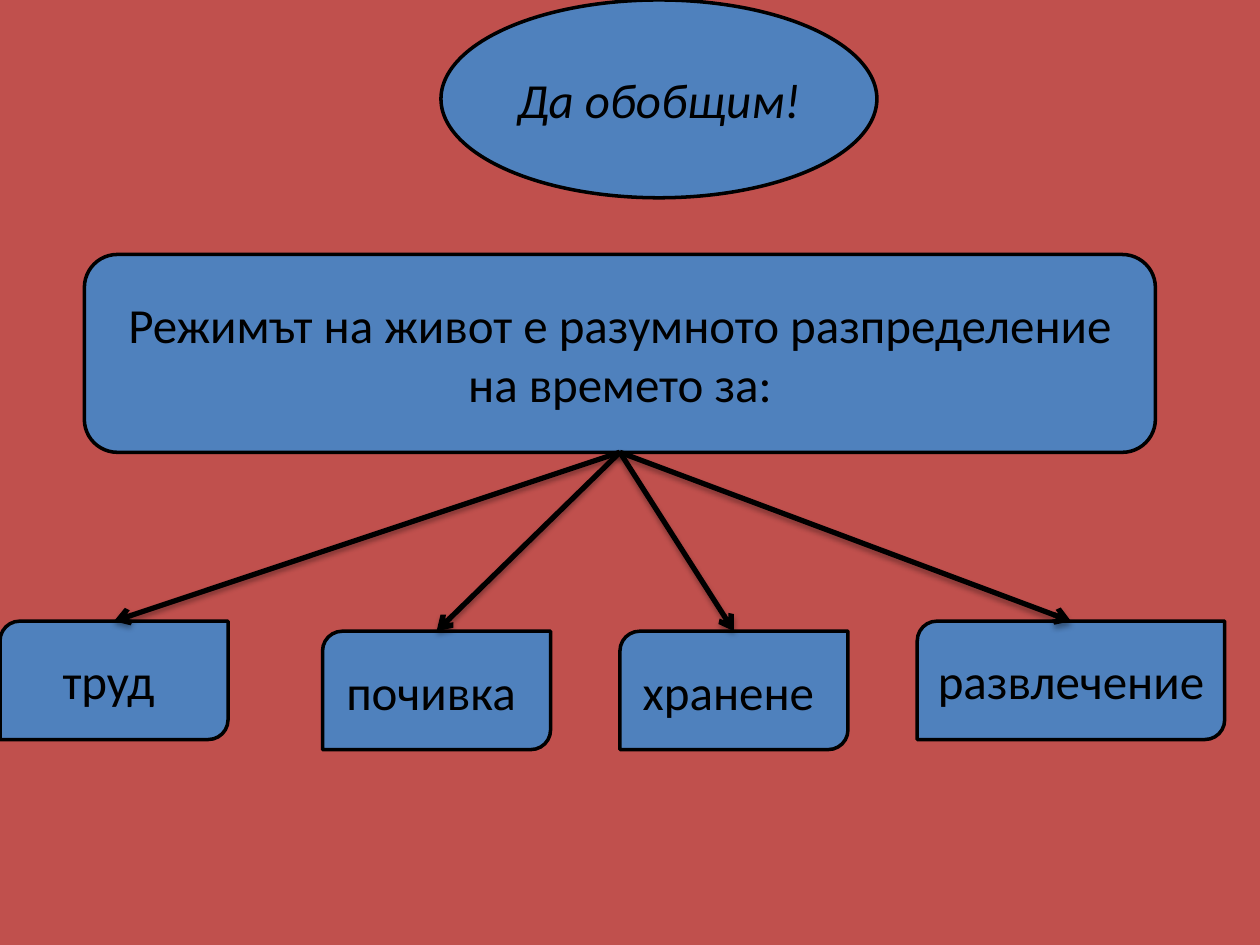
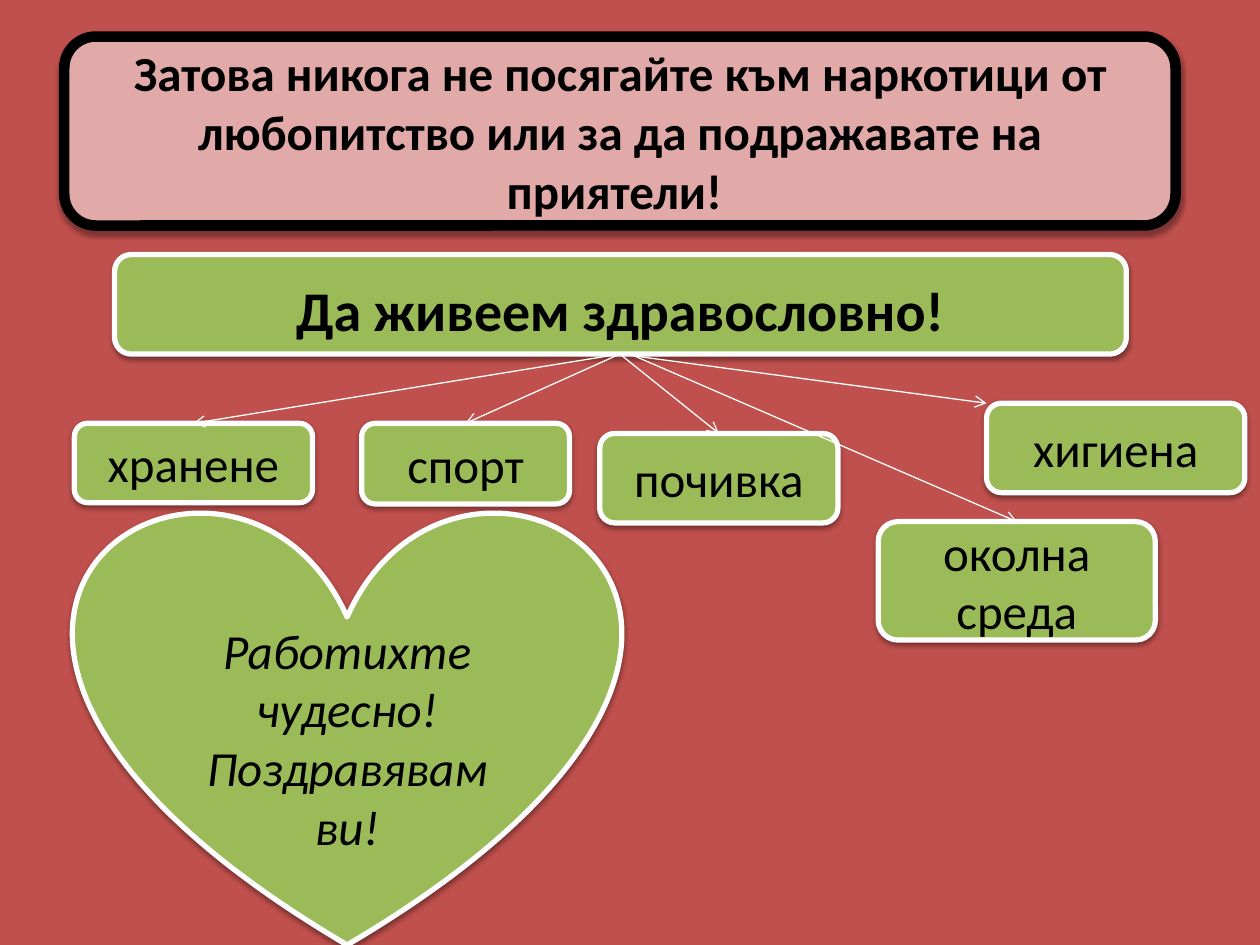
from lxml import etree
from pptx import Presentation
from pptx import util as u
from pptx.dml.color import RGBColor
from pptx.enum import shapes, text
from pptx.oxml import ns

rgb = RGBColor.from_string
RED, BLUE, GREEN, PINK = "C0504D", "4F81BD", "9BBB59", "E1AAA9"
BLACK, WHITE = "000000", "FFFFFF"
DARK_SHADOW, SOFT_SHADOW = (35, 1.8), (38, 1.6)
G = shapes.MSO_SHAPE


def outline(sp, color, width, shadow=None):
    sp.line.color.rgb = rgb(color)
    sp.line.width = u.Pt(width)
    effects = etree.SubElement(sp._element.spPr, ns.qn("a:effectLst"))
    if shadow:
        alpha, dist = shadow
        outer = etree.SubElement(effects, ns.qn("a:outerShdw"), blurRad=str(u.Pt(3.1)),
                                 dist=str(u.Pt(dist)), dir="5400000", rotWithShape="0")
        clr = etree.SubElement(outer, ns.qn("a:srgbClr"), val=BLACK)
        etree.SubElement(clr, ns.qn("a:alpha"), val=str(alpha * 1000))


def box(s, kind, at, words, fill, line, shadow=None, size=28, bold=False, italic=False, top=0.05):
    sp = s.shapes.add_shape(kind, *map(u.Inches, at))
    sp.fill.solid()
    sp.fill.fore_color.rgb = rgb(fill)
    outline(sp, *line, shadow)
    tf = sp.text_frame
    tf.word_wrap = True
    tf.margin_top = u.Inches(top)
    tf.vertical_anchor = text.MSO_ANCHOR.MIDDLE
    p = tf.paragraphs[0]
    p.alignment = text.PP_ALIGN.CENTER
    r = p.add_run()
    r.text = words
    r.font.name = "Calibri"
    r.font.size = u.Pt(size)
    r.font.bold = bold
    r.font.italic = italic
    r.font.color.rgb = rgb(BLACK)


prs = Presentation()
prs.slide_width, prs.slide_height = u.Inches(10), u.Inches(7.5)
slides = []
for _ in range(2):
    s = prs.slides.add_slide(prs.slide_layouts[6])
    s.background.fill.solid()
    s.background.fill.fore_color.rgb = rgb(RED)
    slides.append(s)
summary, healthy = slides

thin_black, white = (BLACK, 2), (WHITE, 3)
box(summary, G.FLOWCHART_ALTERNATE_PROCESS, (0.67, 2.02, 8.5, 1.57),
    "Режимът на живот е разумното разпределение на времето за:", BLUE, thin_black)
box(summary, G.OVAL, (3.5, 0, 3.46, 1.57), "Да обобщим!", BLUE, thin_black, italic=True)

regime_arrows = []
for words, x, y, w in [("труд ", 0, 4.93, 1.81), ("почивка ", 2.56, 5.01, 1.81),
                       ("хранене ", 4.92, 5.01, 1.81), ("развлечение", 7.28, 4.93, 2.44)]:
    box(summary, G.ROUND_2_DIAG_RECTANGLE, (x, y, w, 0.94), words, BLUE, thin_black)
    regime_arrows.append((4.92, 3.59, x + w / 2, y))

box(healthy, G.ROUNDED_RECTANGLE, (0.51, 0.29, 8.82, 1.5),
    "Затова никога не посягайте към наркотици от любопитство или за да подражавате на приятели! ",
    PINK, (BLACK, 6), DARK_SHADOW, bold=True)
box(healthy, G.ROUNDED_RECTANGLE, (0.91, 2.02, 8.03, 0.79), "Да живеем здравословно!",
    GREEN, white, SOFT_SHADOW, size=32, bold=True, top=0.12)

health_arrows = []
for words, x, y, w, h, start, reach in [
        ("хранене", 0.59, 3.36, 1.89, 0.63, 4.92, 0.5),
        ("спорт", 2.87, 3.36, 1.65, 0.64, 4.92, 0.5),
        ("почивка", 4.76, 3.44, 1.89, 0.71, 4.92, 0.5),
        ("хигиена", 7.83, 3.2, 2.05, 0.71, 4.92, 0),
        ("околна среда", 6.97, 4.14, 2.2, 0.94, 5, 0.5)]:
    box(healthy, G.ROUNDED_RECTANGLE, (x, y, w, h), words, GREEN, white, SOFT_SHADOW)
    health_arrows.append((start, 2.81, x + w * reach, y))

box(healthy, G.HEART, (0.59, 4.03, 4.33, 3.47), "Работихте чудесно! Поздравявам ви!",
    GREEN, white, SOFT_SHADOW, italic=True, top=0.52)

for s, arrows, color, width, shadow in [(summary, regime_arrows, BLACK, 3, DARK_SHADOW),
                                        (healthy, health_arrows, WHITE, 0.75, None)]:
    for ends in arrows:
        c = s.shapes.add_connector(shapes.MSO_CONNECTOR.STRAIGHT, *map(u.Inches, ends))
        outline(c, color, width, shadow)
        ln = c._element.spPr.find(ns.qn("a:ln"))
        etree.SubElement(ln, ns.qn("a:tailEnd"), type="arrow")

prs.save("out.pptx")
